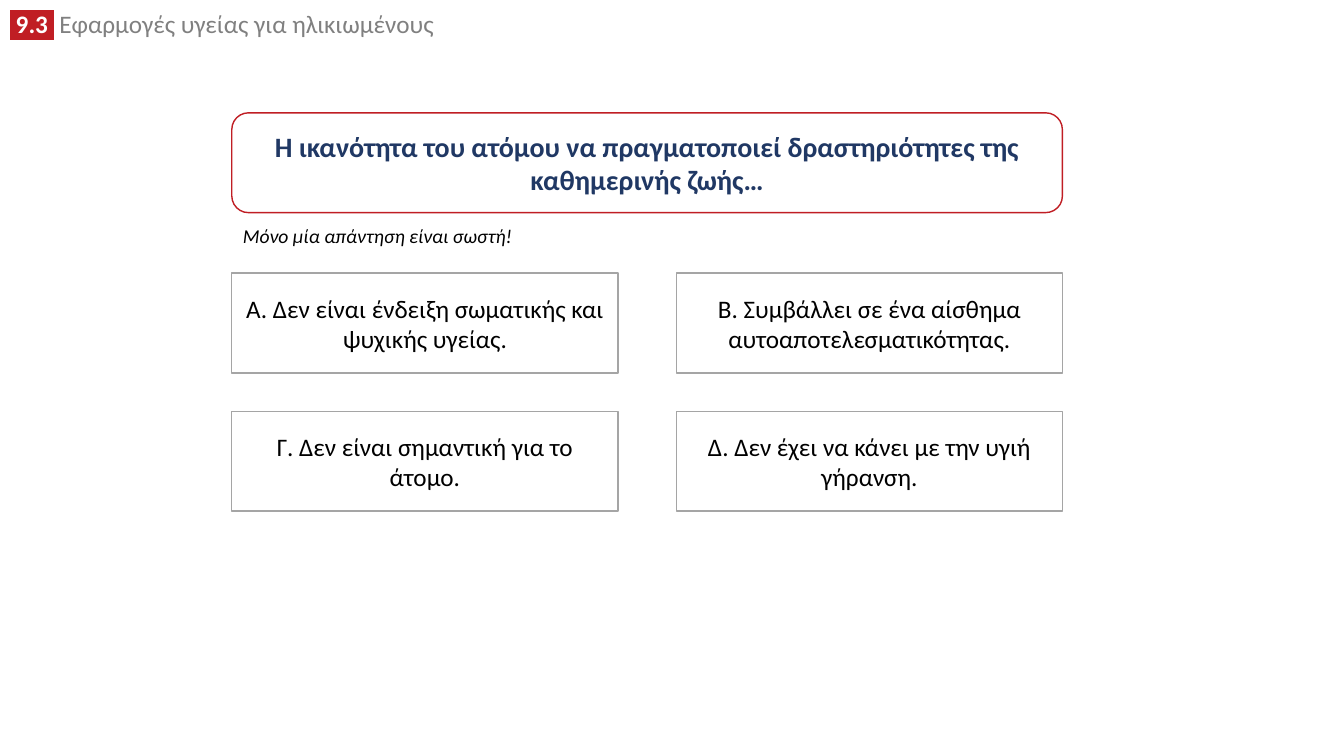
from lxml import etree
from pptx import Presentation
from pptx.dml.color import RGBColor
from pptx.enum import shapes, text
from pptx.oxml.ns import qn
from pptx.util import Pt

FONT = "Calibri"
RED = RGBColor(0xC0, 0x1E, 0x24)
NAVY = RGBColor(0x20, 0x38, 0x64)
GRAY = RGBColor(0x80, 0x80, 0x80)
BORDER = RGBColor(0xA5, 0xA5, 0xA5)
BLACK = RGBColor(0, 0, 0)
WHITE = RGBColor(0xFF, 0xFF, 0xFF)

# Answer grid
LEFT, TOP = 165.6, 195.1
CARD_W, CARD_H = 275.8, 71.3
COL_STEP, ROW_STEP = 317.5, 98.7
ANSWERS = [
    "A. Δεν είναι ένδειξη σωματικής και ψυχικής υγείας.",
    "B. Συμβάλλει σε ένα αίσθημα αυτοαποτελεσματικότητας.",
    "Γ. Δεν είναι σημαντική για το άτομο.",
    "Δ. Δεν έχει να κάνει με την υγιή γήρανση.",
]


def style(paragraph, size, color, bold=False, italic=False):
    font = paragraph.font
    font.name, font.size = FONT, Pt(size)
    font.bold, font.italic = bold, italic
    font.color.rgb = color


def highlight(run, color):
    mark = etree.Element(qn("a:highlight"))
    etree.SubElement(mark, qn("a:srgbClr"), val=str(color))
    run.font._element.find(qn("a:solidFill")).addnext(mark)


def add_heading(slide, number, topic):
    title = slide.shapes.title
    title.left, title.top, title.width, title.height = Pt(0), Pt(6.5), Pt(685.4), Pt(25.2)
    frame = title.text_frame
    frame.vertical_anchor = text.MSO_ANCHOR.TOP
    frame.auto_size = text.MSO_AUTO_SIZE.SHAPE_TO_FIT_TEXT
    heading = frame.paragraphs[0]
    heading.alignment = text.PP_ALIGN.LEFT
    heading.line_spacing = 0.8
    style(heading, 18, GRAY)
    badge = heading.add_run()
    badge.text = f" {number} "
    badge.font.bold = True
    badge.font.color.rgb = WHITE
    highlight(badge, RED)
    heading.add_run().text = f" {topic}"


def add_card(slide, kind, left, top, width, wording, border, size, color, bold=False):
    card = slide.shapes.add_shape(kind, Pt(left), Pt(top), Pt(width), Pt(CARD_H))
    card.shadow.inherit = False
    card.fill.solid()
    card.fill.fore_color.rgb = WHITE
    card.line.color.rgb = border
    card.line.width = Pt(1)
    frame = card.text_frame
    frame.vertical_anchor = text.MSO_ANCHOR.MIDDLE
    frame.text = wording
    frame.paragraphs[0].alignment = text.PP_ALIGN.CENTER
    style(frame.paragraphs[0], size, color, bold)


def add_hint(slide, wording):
    hint = slide.shapes.add_textbox(Pt(166.3), Pt(156.2), Pt(208.1), Pt(24.5))
    frame = hint.text_frame
    frame.word_wrap = False
    frame.auto_size = text.MSO_AUTO_SIZE.SHAPE_TO_FIT_TEXT
    frame.text = wording
    style(frame.paragraphs[0], 14, BLACK, italic=True)


def main():
    prs = Presentation()
    prs.slide_width, prs.slide_height = Pt(960), Pt(540)
    slide = prs.slides.add_slide(prs.slide_layouts[5])

    # Section heading
    add_heading(slide, "9.3", "Εφαρμογές υγείας για ηλικιωμένους")

    # Question
    add_card(slide, shapes.MSO_SHAPE.ROUNDED_RECTANGLE, LEFT, 80.6, COL_STEP + CARD_W,
             "Η ικανότητα του ατόμου να πραγματοποιεί δραστηριότητες της καθημερινής ζωής…",
             RED, 20, NAVY, bold=True)

    # Answers, two per row
    for i, answer in enumerate(ANSWERS):
        row, col = divmod(i, 2)
        add_card(slide, shapes.MSO_SHAPE.RECTANGLE, LEFT + col * COL_STEP,
                 TOP + row * ROW_STEP, CARD_W, answer, BORDER, 18, BLACK)

    add_hint(slide, "Μόνο μία απάντηση είναι σωστή!")
    prs.save("out.pptx")


if __name__ == "__main__":
    main()
